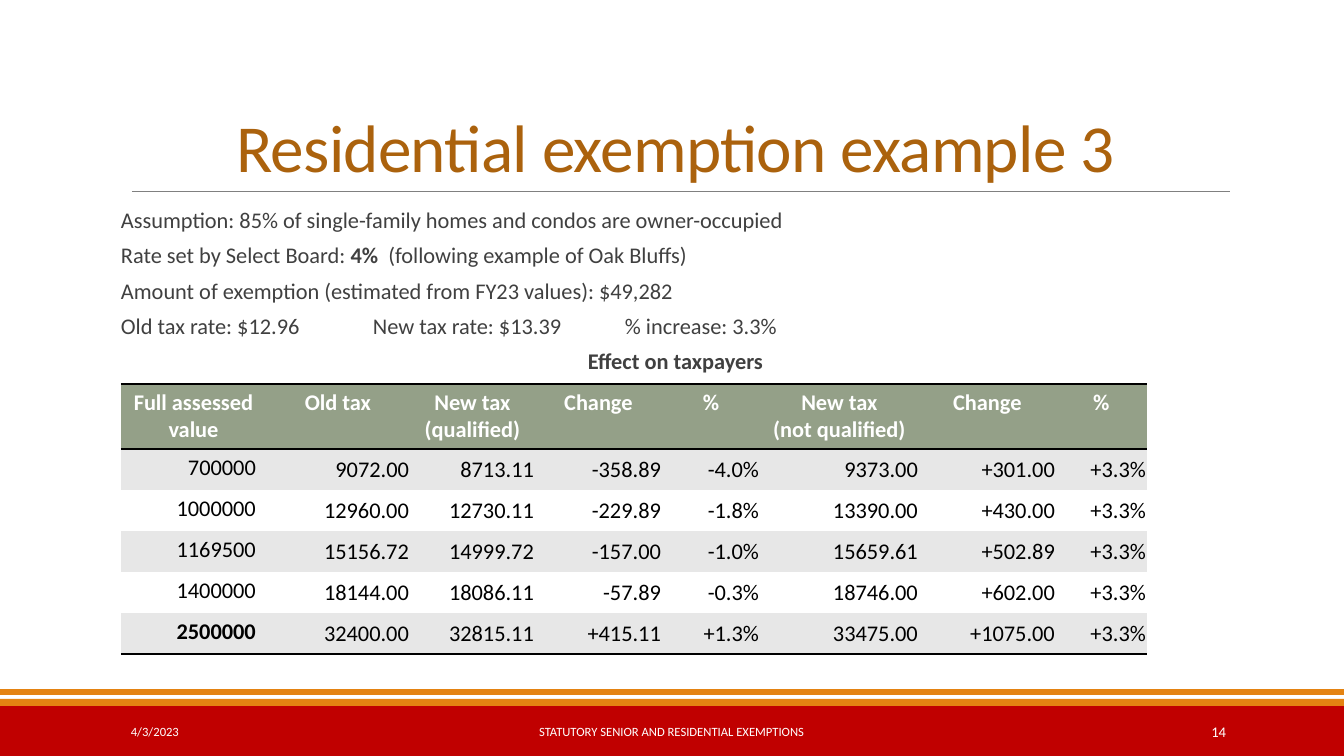
"""Build the slide on the third residential exemption example."""
from lxml.etree import SubElement as Sub
from pptx import Presentation
from pptx.dml.color import RGBColor
from pptx.enum.shapes import MSO_CONNECTOR as Conn, MSO_SHAPE as Shape
from pptx.enum.text import MSO_ANCHOR as Anchor, MSO_AUTO_SIZE as Auto, PP_ALIGN as Align
from pptx.oxml.ns import qn
from pptx.util import Emu, Pt

FONT = "Calibri"
BLACK = RGBColor(0x00, 0x00, 0x00)
WHITE = RGBColor(0xFF, 0xFF, 0xFF)
RED = RGBColor(0xC0, 0x00, 0x00)
AMBER = RGBColor(0xE4, 0x83, 0x12)
BROWN = RGBColor(0xAB, 0x62, 0x0D)
DARK = RGBColor(0x40, 0x40, 0x40)
GRAY = RGBColor(0x80, 0x80, 0x80)
SAGE = RGBColor(0x94, 0xA0, 0x88)
PALE = RGBColor(0xE7, 0xE7, 0xE7)
PLAIN = "{2D5ABB26-0587-4C30-8999-92F81FD0307C}"

BANDS = [(706, 50, RED), (699, 7, AMBER), (689, 6, AMBER)]
NOTES = [
    "Assumption: 85% of single-family homes and condos are owner-occupied",
    [("Rate set by Select Board: ", False), ("4%", True),
     ("  (following example of Oak Bluffs)", False)],
    "Amount of exemption (estimated from FY23 values): $49,282",
    "Old tax rate: $12.96\t\tNew tax rate: $13.39\t\t% increase: 3.3%",
]
WIDTHS = [145, 144, 125, 127, 98, 159, 137, 91]
HEADS = ["Full assessed value", "Old tax", "New tax\n(qualified)", "Change", "%",
         "New tax\n(not qualified)", "Change", "%"]
ROWS = [
    ["700000", "9072.00", "8713.11", "-358.89", "-4.0%", "9373.00", "+301.00", "+3.3%"],
    ["1000000", "12960.00", "12730.11", "-229.89", "-1.8%", "13390.00", "+430.00", "+3.3%"],
    ["1169500", "15156.72", "14999.72", "-157.00", "-1.0%", "15659.61", "+502.89", "+3.3%"],
    ["1400000", "18144.00", "18086.11", "-57.89", "-0.3%", "18746.00", "+602.00", "+3.3%"],
    ["2500000", "32400.00", "32815.11", "+415.11", "+1.3%", "33475.00", "+1075.00", "+3.3%"],
]


def px(num):
    """Turn pixels into EMU."""
    return Emu(round(num * 9144000 / 1008))


def write(para, text, size=16, color=BLACK, bold=False, align=Align.LEFT,
          lead=None, before=0, after=0, track=None):
    """Fill a paragraph with a string or with (text, bold) runs."""
    para.alignment = align
    para.line_spacing = lead
    para.space_before, para.space_after = Pt(before), Pt(after)
    for part, heavy in [(text, bold)] if isinstance(text, str) else text:
        run = para.add_run()
        run.text = part
        font = run.font
        font.name, font.size, font.bold = FONT, Pt(size), heavy
        font.color.rgb = color
        if track is not None:
            font._element.set("spc", str(track))


def add_band(slide, top, high, color):
    """Draw a full-width bar."""
    band = slide.shapes.add_shape(Shape.RECTANGLE, 0, px(top), px(1344), px(high))
    band.shadow.inherit = False
    band.fill.solid()
    band.fill.fore_color.rgb = color
    band.line.fill.background()


def add_rule(slide, left, right, top):
    """Draw the thin line below the title."""
    rule = slide.shapes.add_connector(Conn.STRAIGHT, px(left), px(top), px(right), px(top))
    rule.line.color.rgb = GRAY
    rule.line.width = Pt(0.5)
    Sub(rule._element.spPr, qn("a:effectLst"))


def add_title(slide, text):
    """Place and fill the title."""
    title = slide.shapes.title
    title.left, title.top, title.width, title.height = map(px, (121, 31, 1109, 160))
    frame = title.text_frame
    frame.auto_size, frame.word_wrap = Auto.NONE, True
    frame.vertical_anchor = Anchor.BOTTOM
    write(frame.paragraphs[0], text, size=48, color=BROWN, align=Align.CENTER,
          lead=0.85, track=-50)


def add_box(slide, left, top, wide, high, anchor):
    """Add a wrapping text box and return its frame."""
    box = slide.shapes.add_textbox(px(left), px(top), px(wide), px(high))
    frame = box.text_frame
    frame.word_wrap, frame.vertical_anchor = True, anchor
    return frame


def add_notes(slide):
    """Add the assumptions and the table heading."""
    frame = add_box(slide, 121, 204, 1109, 443, Anchor.TOP)
    frame.margin_left = frame.margin_right = 0
    look = dict(color=DARK, lead=0.9, before=6, after=2)
    write(frame.paragraphs[0], NOTES[0], **look)
    for note in NOTES[1:]:
        write(frame.add_paragraph(), note, **look)
    write(frame.add_paragraph(), "Effect on taxpayers", bold=True, align=Align.CENTER, **look)


def add_edge(cell, *tags):
    """Draw black borders on the named sides of a cell."""
    props = cell._tc.get_or_add_tcPr()
    for tag in tags:
        line = Sub(props, qn(tag), w=str(Pt(2)))
        fill = Sub(line, qn("a:solidFill"))
        Sub(fill, qn("a:srgbClr"), val=str(BLACK))


def fill_cell(cell, text, back, **look):
    """Colour a cell and write its lines."""
    cell.fill.solid()
    cell.fill.fore_color.rgb = back
    frame = cell.text_frame
    for num, line in enumerate(text.split("\n")):
        write(frame.add_paragraph() if num else frame.paragraphs[0], line, **look)


def add_grid(slide):
    """Add the table of tax effects."""
    shape = slide.shapes.add_table(len(ROWS) + 1, len(HEADS), px(121), px(384),
                                   px(sum(WIDTHS)), px(270))
    grid = shape.table
    grid.first_row = grid.horz_banding = False
    next(shape._element.iter(qn("a:tableStyleId"))).text = PLAIN
    for col, wide in zip(grid.columns, WIDTHS):
        col.width = px(wide)
    for row in grid.rows:
        row.height = px(41)
    grid.rows[0].height = px(65)
    for col, head in enumerate(HEADS):
        cell = grid.cell(0, col)
        add_edge(cell, "a:lnT", "a:lnB")
        fill_cell(cell, head, SAGE, color=WHITE, bold=True, align=Align.CENTER)
    last = len(ROWS)
    for row, vals in enumerate(ROWS, 1):
        for col, val in enumerate(vals):
            cell = grid.cell(row, col)
            if row == last:
                add_edge(cell, "a:lnB")
            if col:
                cell.vertical_anchor = Anchor.MIDDLE
                cell.margin_left = cell.margin_right = cell.margin_top = px(1)
                cell.margin_bottom = 0
            fill_cell(cell, val, PALE if row % 2 else WHITE, align=Align.RIGHT,
                      bold=row == last and col == 0)


def add_foot(slide, text, left, wide, align, size=9):
    """Add one footer text."""
    frame = add_box(slide, left, 712, wide, 40, Anchor.MIDDLE)
    write(frame.paragraphs[0], text, size=size, color=WHITE, align=align)


def main():
    """Build and save the slide."""
    deck = Presentation()
    deck.slide_width, deck.slide_height = px(1344), px(756)
    slide = deck.slides.add_slide(deck.slide_layouts[5])
    for band in BANDS:
        add_band(slide, *band)
    add_rule(slide, 132, 1230, 191)
    add_title(slide, "Residential exemption example 3")
    add_notes(slide)
    add_grid(slide)
    add_foot(slide, "4/3/2023", 121, 272, Align.LEFT)
    add_foot(slide, "STATUTORY SENIOR AND RESIDENTIAL EXEMPTIONS", 406, 531, Align.CENTER)
    add_foot(slide, "14", 1092, 144, Align.RIGHT, size=10.5)
    deck.save("out.pptx")


if __name__ == "__main__":
    main()
